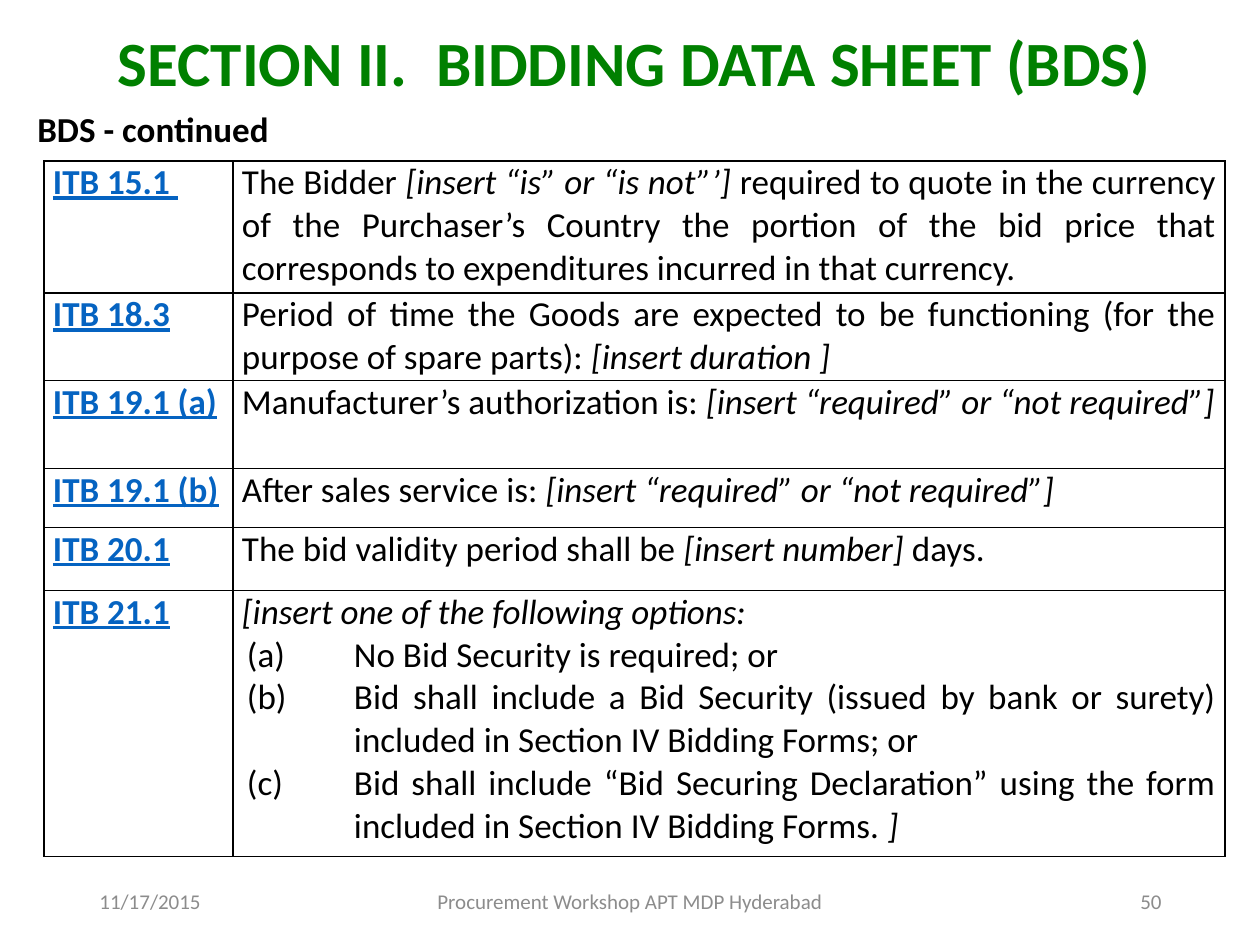
from lxml import etree
from pptx import Presentation
from pptx.dml.color import RGBColor
from pptx.enum.text import MSO_ANCHOR, PP_ALIGN
from pptx.oxml.ns import qn
from pptx.util import Emu, Pt

LEFT, CENTER, RIGHT, JUSTIFY = PP_ALIGN.LEFT, PP_ALIGN.CENTER, PP_ALIGN.RIGHT, PP_ALIGN.JUSTIFY
TOP, MIDDLE, BOTTOM = MSO_ANCHOR.TOP, MSO_ANCHOR.MIDDLE, MSO_ANCHOR.BOTTOM

BLACK, GREEN, BLUE, GREY = "000000", "008000", "0563C1", "8C8C8C"

COLUMNS = [189, 992]
ROW_HEIGHTS = [132, 88, 88, 59, 63, 266]
REQUIRED = ("[insert “required” or “not required”]", True)
CLAUSES = [
    ("ITB 15.1 ", [
        ("The Bidder ", False),
        ("[insert “is” or “is not”’] ", True),
        ("required to quote in the currency of the Purchaser’s Country the portion of "
         "the bid price that corresponds to expenditures incurred in that currency.", False)]),
    ("ITB 18.3", [
        ("Period of time the Goods are expected to be functioning "
         "(for the purpose of spare parts): ", False),
        ("[insert duration ]", True)]),
    ("ITB 19.1 (a)", [("Manufacturer’s authorization is: ", False), REQUIRED]),
    ("ITB 19.1 (b)", [("After sales service is: ", False), REQUIRED]),
    ("ITB 20.1", [
        ("The bid validity period shall be ", False),
        ("[insert number]", True),
        (" days.", False)]),
    ("ITB 21.1", [("[insert one of the following options:", True)]),
]
SECURITY_OPTIONS = [
    [("No Bid Security is required; or", False)],
    [("Bid shall include a Bid Security (issued by bank or surety) "
      "included in Section IV Bidding Forms; or", False)],
    [("Bid shall include “Bid Securing Declaration” using the form "
      "included in Section IV Bidding Forms. ", False), ("]", True)],
]


def px(length):
    return Emu(round(length * 914400 / 126))


def color(value):
    return RGBColor.from_string(value)


def apply(target, values):
    for name, value in values.items():
        setattr(target, name, value)


class SlideBuilder:
    font = "Calibri"
    body_size = 20
    border_width = Pt(0.75)

    def __init__(self, page):
        self.page = page

    def add_spans(self, para, spans, size, fill, layout, **style):
        apply(para, layout)
        for text, italic in spans:
            span = para.add_run()
            span.text = text
            apply(span.font, {"name": self.font, "size": Pt(size), "italic": italic, **style})
            span.font.color.rgb = color(fill)

    def text(self, frame, text, size, fill, anchor, layout, bold=False):
        box = self.page.shapes.add_textbox(*map(px, frame))
        apply(box.text_frame, {"word_wrap": True, "vertical_anchor": anchor})
        self.add_spans(box.text_frame.paragraphs[0], [(text, False)], size, fill, layout,
                       bold=bold)

    def table(self, left, top, columns, rows):
        frame = self.page.shapes.add_table(
            len(rows), len(columns), px(left), px(top), px(sum(columns)), px(sum(rows)))
        table = frame.table
        apply(table, {"first_row": False, "horz_banding": False})
        for column, width in zip(table.columns, columns):
            column.width = px(width)
        for row, height in zip(table.rows, rows):
            row.height = px(height)
        for cell in table.iter_cells():
            apply(cell, {"margin_left": px(9), "margin_right": px(9),
                         "margin_top": 0, "margin_bottom": 0})
            self.border(cell)
            cell.fill.background()
        return table

    def border(self, cell):
        properties = cell._tc.get_or_add_tcPr()
        for side in ("a:lnL", "a:lnR", "a:lnT", "a:lnB"):
            line = etree.SubElement(properties, qn(side), w=str(self.border_width))
            fill = etree.SubElement(line, qn("a:solidFill"))
            etree.SubElement(fill, qn("a:srgbClr"), val=BLACK)

    def clause(self, row, reference, spans, layout):
        label, wording = (cell.text_frame.paragraphs[0] for cell in row.cells)
        self.add_spans(label, [(reference, False)], self.body_size, BLUE,
                       {"space_before": Pt(6)}, bold=True, underline=True)
        self.add_spans(wording, spans, self.body_size, BLACK, layout, bold=False)

    def option(self, cell, spans):
        para = cell.text_frame.add_paragraph()
        self.add_spans(para, spans, self.body_size, BLACK, {"alignment": JUSTIFY}, bold=False)
        properties = para._p.get_or_add_pPr()
        properties.set("marL", str(px(112)))
        properties.set("indent", str(px(-107)))
        etree.SubElement(properties, qn("a:buFont"), typeface=self.font)
        etree.SubElement(properties, qn("a:buAutoNum"), type="alphaLcParenBoth")


def main():
    deck = Presentation()
    apply(deck, {"slide_width": px(1260), "slide_height": px(945)})
    builder = SlideBuilder(deck.slides.add_slide(deck.slide_layouts[6]))

    builder.text((44, 37, 1181, 69), "SECTION II.  BIDDING DATA SHEET (BDS)", 36, GREEN, BOTTOM,
                 {"alignment": CENTER, "line_spacing": 0.9}, bold=True)
    builder.text((25, 106, 1211, 814), "BDS - continued", 20, BLACK, TOP,
                 {"alignment": LEFT, "line_spacing": 0.9, "space_before": Pt(10)}, bold=True)

    footers = [(87, 284, "11/17/2015", LEFT),
               (417, 426, "Procurement Workshop APT MDP Hyderabad", CENTER),
               (890, 284, "50", RIGHT)]
    for left, width, text, alignment in footers:
        builder.text((left, 876, width, 50), text, 12, GREY, MIDDLE, {"alignment": alignment})

    table = builder.table(44, 161, COLUMNS, ROW_HEIGHTS)
    spaced = {"alignment": JUSTIFY, "space_before": Pt(6), "space_after": Pt(6)}
    layouts = [spaced] * (len(CLAUSES) - 1) + [{"alignment": LEFT}]
    for row, (reference, spans), layout in zip(table.rows, CLAUSES, layouts):
        builder.clause(row, reference, spans, layout)
    for spans in SECURITY_OPTIONS:
        builder.option(table.cell(len(CLAUSES) - 1, 1), spans)

    deck.save("out.pptx")


if __name__ == "__main__":
    main()
